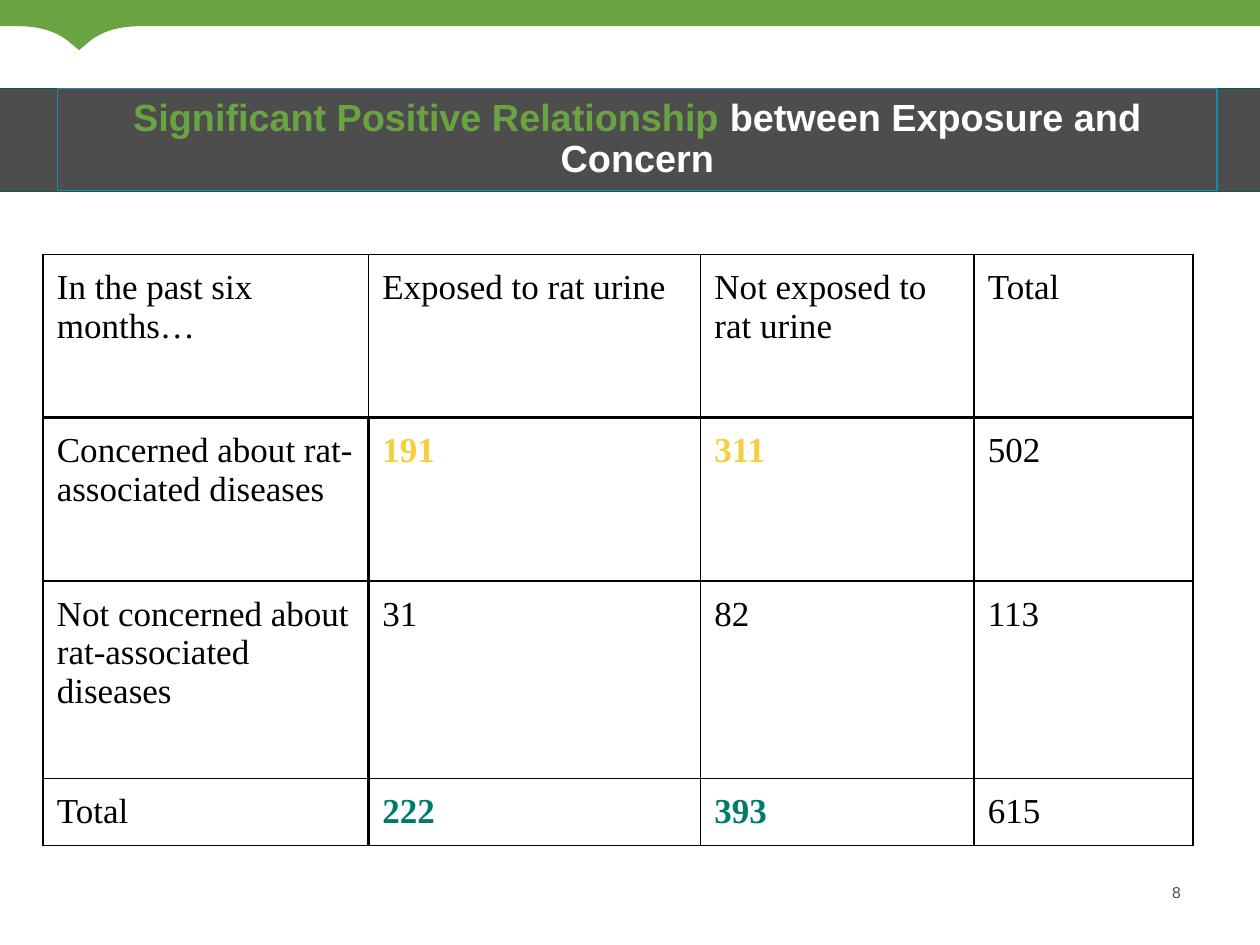
"""Build a slide with a cross table of exposure and concern."""
from dataclasses import dataclass

from lxml.etree import SubElement
from pptx import Presentation
from pptx.dml.color import RGBColor
from pptx.enum.text import MSO_ANCHOR, PP_ALIGN
from pptx.oxml.ns import qn
from pptx.util import Pt


@dataclass(frozen=True)
class Theme:
    """Colours, fonts and type sizes of the slide."""
    green: str = "6AA342"
    teal: str = "007B69"
    dark_teal: str = "005B4E"
    blue: str = "158CA6"
    grey: str = "4D4D4D"
    yellow: str = "F7CE3C"
    white: str = "FFFFFF"
    black: str = "000000"
    heading_font: str = "Arial"
    table_font: str = "Times New Roman"
    title_size: float = 21.6
    table_size: float = 20
    number_size: float = 9
    thin: float = 1
    thick: float = 2.25


def write_text(paragraph, text, *, font, size, color, bold=False):
    """Add one formatted run to a paragraph."""
    run = paragraph.add_run()
    run.text = text
    run.font.name = font
    run.font.size = Pt(size)
    run.font.bold = bold
    run.font.color.rgb = RGBColor.from_string(color)


def curve_points(start, control_1, control_2, end, steps=12):
    """Return points along a cubic curve, without its start."""
    points = []
    for step in range(1, steps + 1):
        t = step / steps
        weights = ((1 - t) ** 3, 3 * t * (1 - t) ** 2, 3 * t * t * (1 - t), t ** 3)
        corners = (start, control_1, control_2, end)
        points.append(tuple(sum(w * c[axis] for w, c in zip(weights, corners))
                            for axis in (0, 1)))
    return points


class SlideBuilder:
    """Hold the theme and the current slide."""

    def __init__(self, slide, theme):
        self.slide = slide
        self.theme = theme

    def paint(self, shape, fill=None, line=None, width=1):
        """Set the fill and line of a shape."""
        shape.shadow.inherit = False
        if fill:
            shape.fill.solid()
            shape.fill.fore_color.rgb = RGBColor.from_string(fill)
        else:
            shape.fill.background()
        if line:
            shape.line.color.rgb = RGBColor.from_string(line)
            shape.line.width = Pt(width)
        else:
            shape.line.fill.background()

    def band(self, top, height, fill, line=None):
        """Add a rectangle across the whole slide."""
        stripe = self.slide.shapes.add_shape(1, 0, Pt(top), Pt(720), Pt(height))
        self.paint(stripe, fill, line)

    def ribbon(self, center, base, tip):
        """Add the top strip with its pointed tab."""
        shoulder = [(center + 35.5, base)]
        shoulder += curve_points(shoulder[0], (center + 24, base),
                                 (center + 14.8, base + 2.2), (center + 6.8, base + 8))
        mirrored = [(2 * center - x, y) for x, y in reversed(shoulder)]
        outline = [(720, 0), (720, base), *shoulder, (center, tip), *mirrored, (0, base)]
        pen = self.slide.shapes.build_freeform(0, 0)
        pen.add_line_segments([(Pt(x), Pt(y)) for x, y in outline], close=True)
        self.paint(pen.convert_to_shape(), self.theme.green)

    def title(self, parts, left, top, width, height):
        """Format the title and bring it in front of the bands."""
        heading = self.slide.shapes.title
        self.slide.shapes._spTree.append(heading._element)
        heading.left, heading.top = Pt(left), Pt(top)
        heading.width, heading.height = Pt(width), Pt(height)
        self.paint(heading, line=self.theme.blue, width=0.75)
        frame = heading.text_frame
        frame.word_wrap = True
        frame.vertical_anchor = MSO_ANCHOR.MIDDLE
        paragraph = frame.paragraphs[0]
        paragraph.alignment = PP_ALIGN.CENTER
        paragraph.line_spacing = 0.9
        for text, color in parts:
            write_text(paragraph, text, font=self.theme.heading_font,
                       size=self.theme.title_size, color=color, bold=True)

    def page_number(self, text, left, top, width, height):
        """Add the right-aligned slide number."""
        frame = self.slide.shapes.add_textbox(
            Pt(left), Pt(top), Pt(width), Pt(height)).text_frame
        frame.margin_left = frame.margin_right = frame.margin_top = frame.margin_bottom = 0
        frame.word_wrap = True
        frame.paragraphs[0].alignment = PP_ALIGN.RIGHT
        write_text(frame.paragraphs[0], text, font=self.theme.heading_font,
                   size=self.theme.number_size, color=self.theme.grey)

    def borders(self, cell, **widths):
        """Draw the four borders of a cell."""
        properties = cell._tc.get_or_add_tcPr()
        for side in "LRTB":
            line = SubElement(properties, qn(f"a:ln{side}"),
                              w=str(Pt(widths.get(side, self.theme.thin))))
            fill = SubElement(line, qn("a:solidFill"))
            SubElement(fill, qn("a:srgbClr"), val=self.theme.black)

    def table(self, rows, left, top, widths, heights, highlights):
        """Add a ruled table with a heavy line below and beside its headers."""
        theme = self.theme
        grid = self.slide.shapes.add_table(
            len(rows), len(widths), Pt(left), Pt(top),
            Pt(sum(widths)), Pt(sum(heights))).table
        grid.first_row = grid.horz_banding = False
        for column, width in zip(grid.columns, widths):
            column.width = Pt(width)
        for r, (values, height) in enumerate(zip(rows, heights)):
            grid.rows[r].height = Pt(height)
            for c, value in enumerate(values):
                cell = grid.cell(r, c)
                heavy = {"B": r == 0, "T": r == 1,
                         "R": r > 0 and c == 0, "L": r > 0 and c == 1}
                self.borders(cell, **{side: theme.thick for side, on in heavy.items() if on})
                cell.fill.background()
                cell.margin_left = cell.margin_right = Pt(8)
                cell.margin_top = cell.margin_bottom = Pt(8)
                accent = highlights.get(r) if c in (1, 2) else None
                paragraph = cell.text_frame.paragraphs[0]
                paragraph.space_after = Pt(12)
                write_text(paragraph, value, font=theme.table_font, size=theme.table_size,
                           color=accent or theme.black, bold=bool(accent))


def main():
    """Build and save the slide."""
    theme = Theme()
    deck = Presentation()
    deck.slide_width, deck.slide_height = Pt(720), Pt(540)
    builder = SlideBuilder(deck.slides.add_slide(deck.slide_layouts[5]), theme)
    builder.page_number("8", 650, 504.5, 24.8, 11)
    builder.ribbon(center=45.2, base=15, tip=28.7)
    builder.band(51, 58.4, theme.teal, theme.dark_teal)
    builder.band(51, 58.4, theme.grey)
    builder.title([("Significant Positive Relationship ", theme.green),
                   ("between Exposure and Concern", theme.white)],
                  33, 50.5, 662.4, 58.5)
    builder.table(
        [("In the past six months…", "Exposed to rat urine",
          "Not exposed to rat urine", "Total"),
         ("Concerned about rat-associated diseases", "191", "311", "502"),
         ("Not concerned about rat-associated diseases", "31", "82", "113"),
         ("Total", "222", "393", "615")],
        24.5, 145.3, (186, 189.8, 156.3, 125.2), (93.3, 93.3, 113, 38),
        highlights={1: theme.yellow, 3: theme.teal})
    deck.save("out.pptx")


if __name__ == "__main__":
    main()
